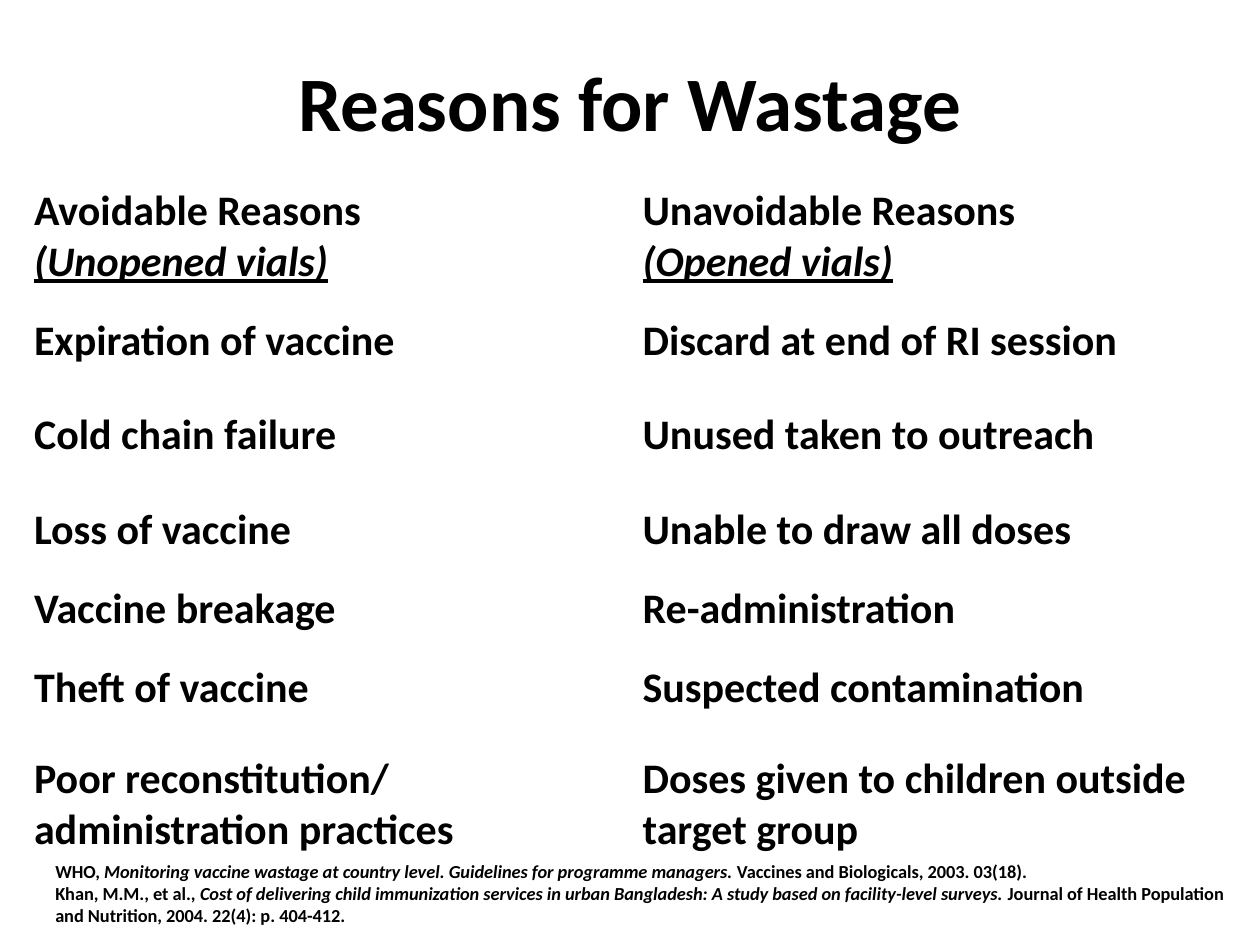
from lxml import etree
from pptx import Presentation
from pptx import util as u
from pptx.dml.color import RGBColor
from pptx.enum import text
from pptx.oxml import ns

WIDTH, HEIGHT = 10, 7.5
BLACK, WHITE = "000000", "FFFFFF"
ROW_HEIGHTS = [0.91, 0.75, 0.75, 0.75, 0.51, 0.75, 1.09]
EMPHASIS = {"italic": True, "underline": True}

REASONS = [
    ([[("Avoidable Reasons", {})], [("(Unopened vials)", EMPHASIS)]],
     [[("Unavoidable Reasons", {})], [("(Opened vials)", EMPHASIS)]]),
    ("Expiration of vaccine", "Discard at end of RI session"),
    ("Cold chain failure", "Unused taken to outreach"),
    ("Loss of vaccine", "Unable to draw all doses"),
    ("Vaccine breakage", "Re-administration"),
    ("Theft of vaccine", "Suspected contamination"),
    ([[("Poor reconstitution/", {})], [("administration practices", {})]],
     "Doses given to children outside target group"),
]

SOURCES = [
    [("WHO, ", {}),
     ("Monitoring vaccine wastage at country level. Guidelines for programme managers.",
      {"italic": True}),
     (" Vaccines and Biologicals, 2003. 03(18).", {})],
    [("Khan, M.M., et al., ", {}),
     ("Cost of delivering child immunization services in urban Bangladesh: "
      "A study based on facility-level surveys.", {"italic": True}),
     (" Journal of Health Population and Nutrition, 2004. 22(4): p. 404-412.", {})],
]


def color(value):
    return RGBColor.from_string(value)


def write(frame, content, size, align=text.PP_ALIGN.LEFT):
    lines = [[(content, {})]] if isinstance(content, str) else content
    frame.word_wrap = True
    for index, line in enumerate(lines):
        para = frame.add_paragraph() if index else frame.paragraphs[0]
        para.alignment = align
        for words, style in line:
            span = para.add_run()
            span.text = words
            font = span.font
            font.name, font.size, font.bold = "Calibri", u.Pt(size), True
            font.color.rgb = color(BLACK)
            font.italic = style.get("italic", False)
            font.underline = style.get("underline", False)


def add_text(page, left, top, width, height, content, size, align=text.PP_ALIGN.LEFT):
    box = page.shapes.add_textbox(*map(u.Inches, (left, top, width, height)))
    box.text_frame.vertical_anchor = text.MSO_ANCHOR.MIDDLE
    write(box.text_frame, content, size, align)


def set_borders(cell, widths):
    properties = cell._tc.get_or_add_tcPr()
    for side, points in widths.items():
        line = etree.SubElement(properties, ns.qn(f"a:ln{side}"), w=str(u.Pt(points)))
        fill = etree.SubElement(line, ns.qn("a:solidFill"))
        etree.SubElement(fill, ns.qn("a:srgbClr"), val=WHITE)


def add_reasons(page, left, top, width):
    frame = page.shapes.add_table(
        len(REASONS), 2, *map(u.Inches, (left, top, width, sum(ROW_HEIGHTS))))
    table = frame.table
    for row, height in zip(table.rows, ROW_HEIGHTS):
        row.height = u.Inches(height)
    for row, pair in enumerate(REASONS):
        for column, content in enumerate(pair):
            cell = table.cell(row, column)
            set_borders(cell, {"L": 1, "R": 1, "T": 3 if row == 1 else 1,
                               "B": 3 if row == 0 else 1})
            cell.fill.background()
            cell.vertical_anchor = text.MSO_ANCHOR.MIDDLE
            write(cell.text_frame, content, 24)


def main():
    deck = Presentation()
    deck.slide_width, deck.slide_height = u.Inches(WIDTH), u.Inches(HEIGHT)
    page = deck.slides.add_slide(deck.slide_layouts[6])
    page.background.fill.solid()
    page.background.fill.fore_color.rgb = color(WHITE)
    margin = 0.17
    add_text(page, WIDTH * 0.05, margin, WIDTH * 0.9, HEIGHT / 6,
             "Reasons for Wastage", 44, text.PP_ALIGN.CENTER)
    add_reasons(page, margin, margin + HEIGHT / 6, WIDTH - 2 * margin)
    add_text(page, 2 * margin, 6.76, 9.59, 0.66, SOURCES, 10.5)
    deck.save("out.pptx")


if __name__ == "__main__":
    main()
